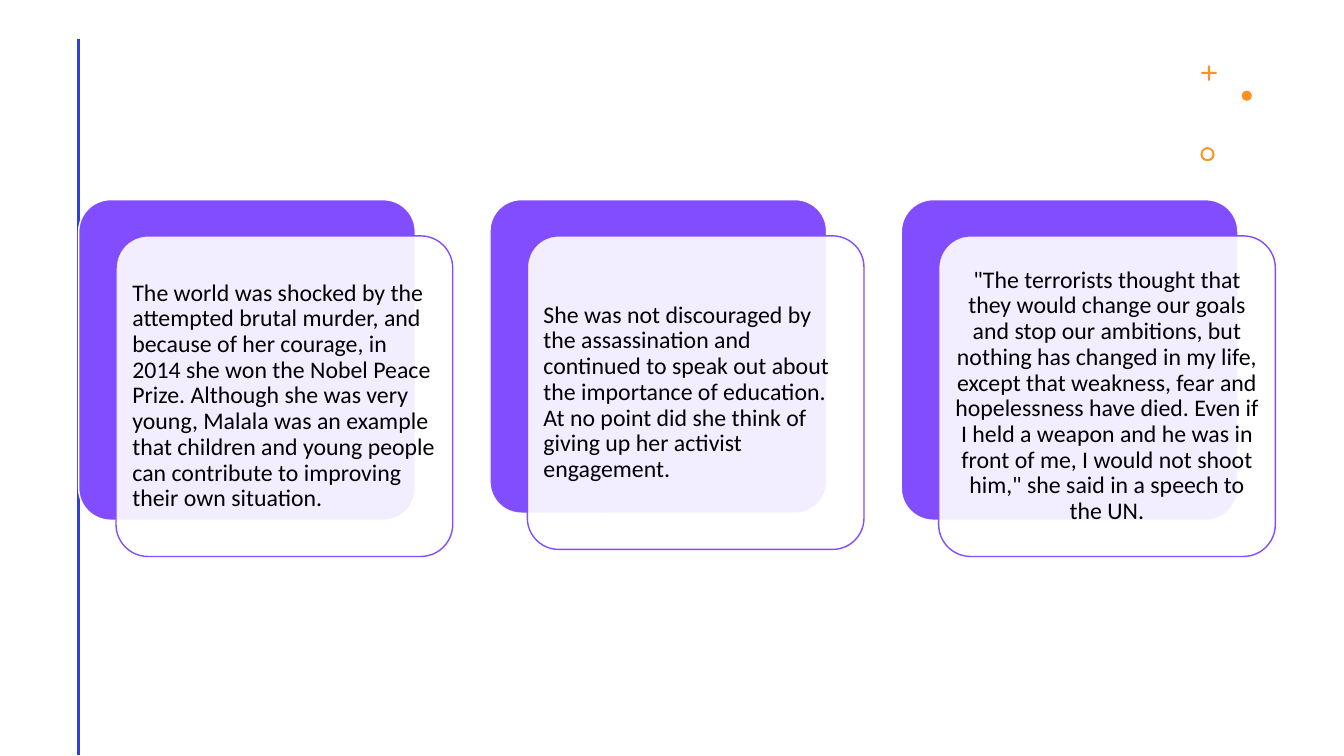
from lxml import etree
from pptx import Presentation
from pptx.dml.color import RGBColor
from pptx.enum.shapes import MSO_CONNECTOR, MSO_SHAPE
from pptx.enum.text import MSO_ANCHOR, PP_ALIGN
from pptx.oxml.ns import qn
from pptx.util import Pt

STRAIGHT = MSO_CONNECTOR.STRAIGHT
ROUNDED, CROSS = MSO_SHAPE.ROUNDED_RECTANGLE, MSO_SHAPE.CROSS
OVAL, DONUT = MSO_SHAPE.OVAL, MSO_SHAPE.DONUT
MIDDLE = MSO_ANCHOR.MIDDLE
LEFT, CENTER = PP_ALIGN.LEFT, PP_ALIGN.CENTER

COLORS = {"rule": "2E3FDB", "accent": "FF9022", "card": "814DFF",
          "panel": "FFFFFF", "text": "000000"}

CARD_LEFT, CARD_TOP, CARD_WIDTH, CARD_STEP = 56.2, 142.6, 240.5, 293.8
PANEL_SHIFT_X, PANEL_SHIFT_Y = 26.7, 25.9

CARDS = [
    ("The world was shocked by the attempted brutal murder, and because of her "
     "courage, in 2014 she won the Nobel Peace Prize. Although she was very young, "
     "Malala was an example that children and young people can contribute to "
     "improving their own situation.", 229, LEFT),
    ("She was not discouraged by the assassination and continued to speak out about "
     "the importance of education. At no point did she think of giving up her "
     "activist engagement.", 224, LEFT),
    ('"The terrorists thought that they would change our goals and stop our '
     "ambitions, but nothing has changed in my life, except that weakness, fear and "
     "hopelessness have died. Even if I held a weapon and he was in front of me, I "
     'would not shoot him," she said in a speech to the UN.', 229, CENTER),
]

ORNAMENTS = [
    (CROSS, 858.2, 46.8, 10.8, 0.43),
    (OVAL, 887, 64.8, 7.2, None),
    (DONUT, 857.5, 105.1, 10.1, 0.14),
]


def color(name):
    """Return the named colour."""
    return RGBColor.from_string(COLORS[name])


def add_filled(slide, kind, left, top, width, height, fill, line=None, adjustment=None):
    """Add a preset shape with a solid fill and an optional outline."""
    shape = slide.shapes.add_shape(kind, Pt(left), Pt(top), Pt(width), Pt(height))
    shape.shadow.inherit = False
    shape.fill.solid()
    shape.fill.fore_color.rgb = color(fill)
    if line:
        shape.line.color.rgb = color(line)
        shape.line.width = Pt(1)
    else:
        shape.line.fill.background()
    if adjustment is not None:
        shape.adjustments[0] = adjustment
    return shape


def set_opacity(shape, percent):
    """Make the solid fill of a shape partly transparent."""
    fill_color = shape.fill._xPr.find(qn("a:solidFill"))[0]
    etree.SubElement(fill_color, qn("a:alpha"), val=str(percent * 1000))


def write_text(shape, text, alignment):
    """Write one vertically centred paragraph into a shape."""
    frame = shape.text_frame
    frame.word_wrap = True
    frame.vertical_anchor = MIDDLE
    frame.margin_left = frame.margin_right = Pt(5)
    frame.margin_top = frame.margin_bottom = Pt(5)
    paragraph = frame.paragraphs[0]
    paragraph.text = text
    paragraph.alignment = alignment
    paragraph.line_spacing = 0.9
    paragraph.font.size = Pt(17)
    paragraph.font.name = "Calibri"
    paragraph.font.color.rgb = color("text")


def add_card(slide, index, text, height, alignment):
    """Add a purple card with its translucent text panel in front."""
    left = CARD_LEFT + index * CARD_STEP
    add_filled(slide, ROUNDED, left, CARD_TOP, CARD_WIDTH, height,
               "card", "panel", 0.1)
    panel = add_filled(slide, ROUNDED, left + PANEL_SHIFT_X, CARD_TOP + PANEL_SHIFT_Y,
                       CARD_WIDTH, height, "panel", "card", 0.1)
    set_opacity(panel, 90)
    write_text(panel, text, alignment)


def add_rule(slide, x, top, bottom):
    """Add a vertical line without a shadow."""
    rule = slide.shapes.add_connector(STRAIGHT, Pt(x), Pt(top), Pt(x), Pt(bottom))
    rule.line.color.rgb = color("rule")
    rule.line.width = Pt(2)
    etree.SubElement(rule._element.spPr, qn("a:effectLst"))


def main():
    """Build the slide and save it."""
    presentation = Presentation()
    presentation.slide_width, presentation.slide_height = Pt(960), Pt(540)
    slide = presentation.slides.add_slide(presentation.slide_layouts[6])
    add_rule(slide, CARD_LEFT, 28, 539.5)
    for kind, left, top, size, adjustment in ORNAMENTS:
        add_filled(slide, kind, left, top, size, size, "accent", adjustment=adjustment)
    for index, (text, height, alignment) in enumerate(CARDS):
        add_card(slide, index, text, height, alignment)
    presentation.save("out.pptx")


if __name__ == "__main__":
    main()
